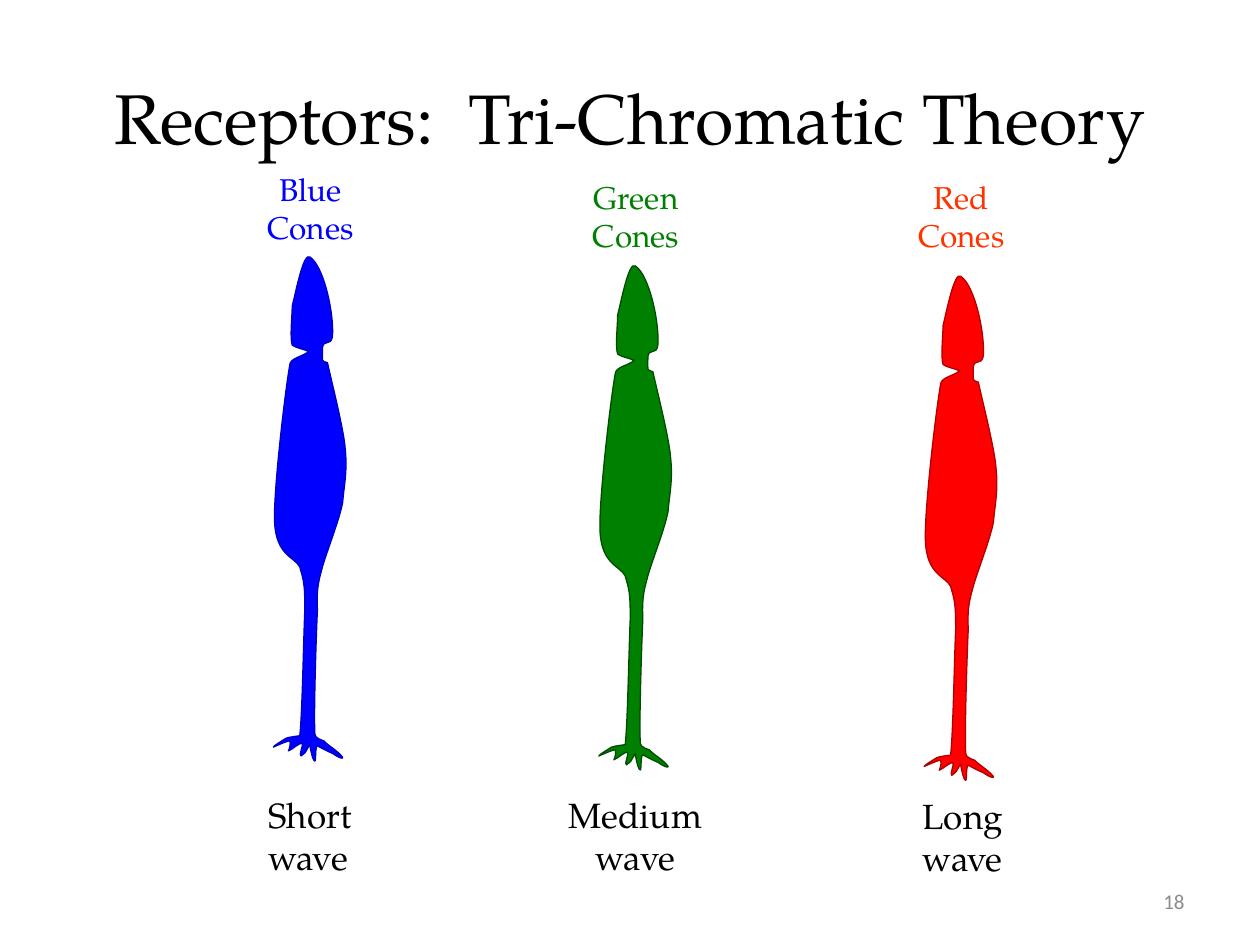
from lxml.etree import Element
from pptx import Presentation
from pptx.dml.color import RGBColor
from pptx.enum.text import MSO_ANCHOR, MSO_AUTO_SIZE, PP_ALIGN
from pptx.oxml.ns import qn
from pptx.util import Cm, Pt

SERIF = "TeX Gyre Pagella"
LEFT, MID, RIGHT = PP_ALIGN.LEFT, PP_ALIGN.CENTER, PP_ALIGN.RIGHT
STEP = 6.56   # from one cone to the next, cm
UNIT = Cm(2.54) / 100   # outline points are in hundredths of an inch

# Outline of a cone cell: a start, then two handles and an end per curve
START = (33, 383)
CURVES = [
    ((33, 386), (40, 388), (40, 388)), ((45, 393), (50, 395), (55, 401)),
    ((56, 403), (51, 401), (47, 398)), ((42, 396), (37, 393), (35, 392)),
    ((33, 393), (34, 404), (33, 404)), ((31, 404), (29, 392), (29, 391)),
    ((24, 399), (27, 396), (22, 400)), ((20, 400), (24, 391), (23, 390)),
    ((21, 389), (15, 395), (12, 396)), ((13, 394), (14, 390), (13, 388)),
    ((11, 388), (0, 393), (0, 393)), ((0, 392), (7, 388), (10, 386)),
    ((12, 385), (21, 384), (21, 384)), ((23, 367), (24, 305), (25, 284)),
    ((25, 262), (24, 261), (21, 250)), ((17, 242), (2, 241), (1, 214)),
    ((0, 191), (9, 113), (13, 90)), ((13, 84), (24, 83), (28, 79)),
    ((21, 76), (20, 77), (15, 74)), ((13, 68), (15, 51), (15, 43)),
    ((18, 31), (24, 0), (29, 4)), ((40, 11), (48, 48), (47, 66)),
    ((46, 77), (39, 67), (39, 78)), ((39, 88), (38, 86), (43, 88)),
    ((46, 102), (56, 141), (57, 156)), ((59, 174), (56, 186), (55, 199)),
    ((52, 214), (43, 236), (39, 250)), ((37, 258), (34, 265), (35, 284)),
    ((34, 306), (32, 366), (33, 383)),
]

# top text, its top, its colour, cone top, fill, line,
# bottom text, its left, top, width and alignment
CONES = [
    ("Blue", 3.3, "0000FF", 5.08, "0000FF", "0000C0",
     "Short", 5.16, 15.88, 2.18, LEFT),
    ("Green", 3.47, "008000", 5.26, "008000", "004C00",
     "Medium", 11.21, 15.88, 3.2, MID),
    ("Red", 3.47, "FF3300", 5.47, "FF0000", "B00000",
     "Long", 18.32, 15.9, 2.18, MID),
]


def rgb(code):
    return RGBColor.from_string(code)


def write(frame, lines, size, code, align=MID, name=SERIF):
    """Fill a text frame with one formatted paragraph per line."""
    frame.text = "\n".join(lines)
    for para in frame.paragraphs:
        para.alignment = align
        font = para.runs[0].font
        for key, val in {"name": name, "size": Pt(size)}.items():
            setattr(font, key, val)
        font.color.rgb = rgb(code)


deck = Presentation()
deck.slide_width, deck.slide_height = Cm(25.4), Cm(19.05)
slide = deck.slides.add_slide(deck.slide_layouts[5])
shapes = slide.shapes

title = shapes.title
place = {"left": 1.27, "top": 0.76, "width": 22.86, "height": 3.18}
for key, val in place.items():
    setattr(title, key, Cm(val))
title.text_frame.vertical_anchor = MSO_ANCHOR.MIDDLE
write(title.text_frame, ["Receptors:  Tri-Chromatic Theory"], 40, "000000")

number = shapes.add_textbox(Cm(18.21), Cm(17.65), Cm(5.92), Cm(1.02)).text_frame
number.word_wrap = True
number.vertical_anchor = MSO_ANCHOR.MIDDLE
write(number, ["18"], 12, "8C8C8C", RIGHT, "Calibri")

points = [point for curve in CURVES for point in curve]

for col, cone in enumerate(CONES):
    hue, high, ink, top, fill, edge, wave, left, low, wide, align = cone

    pen = shapes.build_freeform(*START, scale=UNIT)
    pen.add_line_segments(points, close=True)
    cell = pen.convert_to_shape(Cm(5.51 + STEP * col), Cm(top))
    # Each three straight steps become one Bezier curve
    steps = list(cell.element.iter(qn("a:lnTo")))
    for i in range(0, len(steps), 3):
        bend = Element(qn("a:cubicBezTo"))
        steps[i].addprevious(bend)
        for step in steps[i:i + 3]:
            bend.append(step[0])
            step.getparent().remove(step)
    cell.shadow.inherit = False
    cell.fill.solid()
    cell.fill.fore_color.rgb = rgb(fill)
    cell.line.color.rgb = rgb(edge)
    cell.line.width = Pt(0.75)

    labels = [
        ([hue, "Cones"], 5.13 + STEP * col, high, 2.26, 1.78, 18, ink, MID),
        ([wave, "wave"], left, low, wide, 1.96, 20, "000000", align),
    ]
    for lines, x, y, w, h, size, code, side in labels:
        box = shapes.add_textbox(Cm(x), Cm(y), Cm(w), Cm(h))
        frame = box.text_frame
        frame.word_wrap = False
        frame.auto_size = MSO_AUTO_SIZE.SHAPE_TO_FIT_TEXT
        write(frame, lines, size, code, side)

deck.save("out.pptx")
